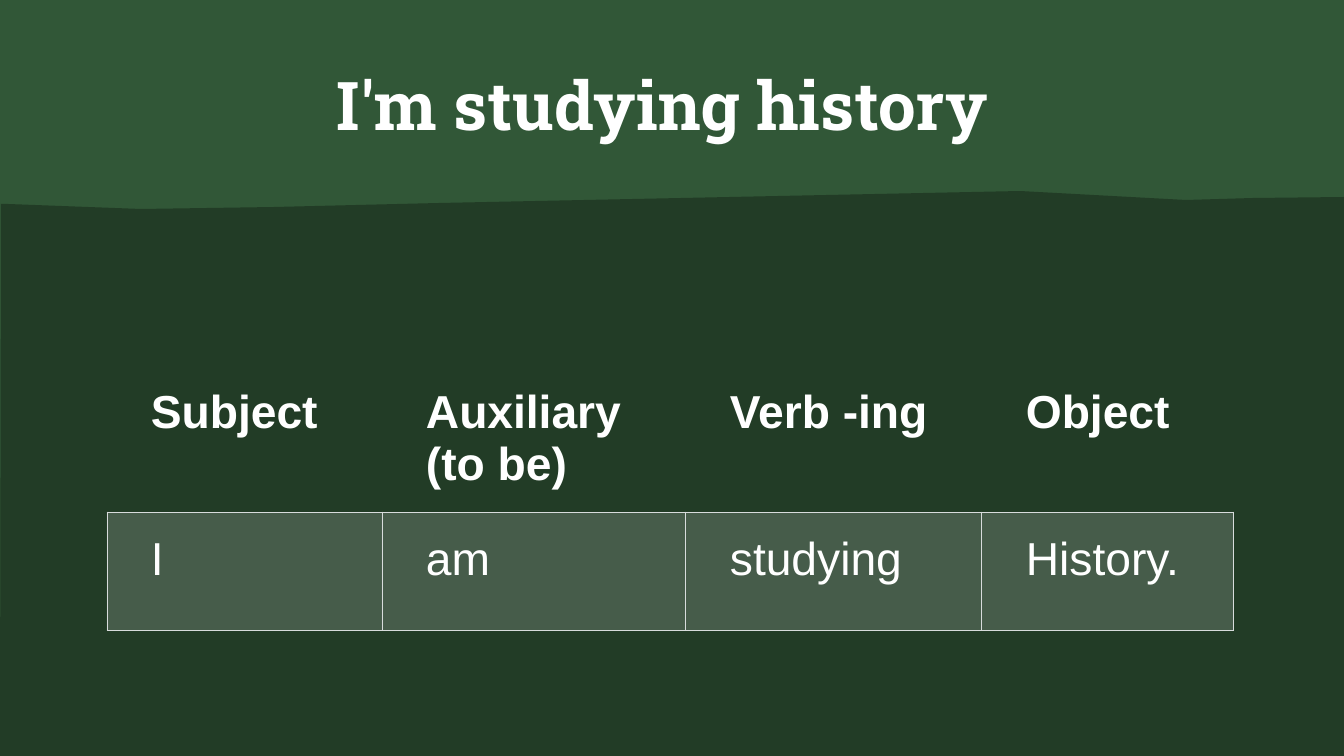
from lxml.etree import SubElement
from pptx import Presentation
from pptx.dml.color import RGBColor
from pptx.enum.shapes import MSO_SHAPE
from pptx.enum.text import MSO_ANCHOR, PP_ALIGN
from pptx.oxml.ns import qn
from pptx.util import Pt

PX = 12192000 / 1344
WIDTH, HEIGHT = 1344, 756
DARK, GREEN, WHITE = "223C26", "315737", "FFFFFF"
CELL, BORDER = "D8DEDC", "D8DCDC"

HILL = [(1020, 191), (1186, 200), (1253, 198), (1344, 197), (1344, 756),
        (0, 756), (1, 204), (8, 204), (141, 209), (274, 207), (357, 205),
        (439, 203)]
COLUMNS = [275, 304, 296, 252]
ROWS = [147, 118]
WORDS = [["Subject", "Auxiliary (to be)", "Verb -ing", "Object"],
         ["I", "am", "studying", "History."]]


def px(*values):
    return [round(v * PX) for v in values]


def color(value):
    return RGBColor.from_string(value)


def paint(sp, value):
    sp.shadow.inherit = False
    sp.fill.solid()
    sp.fill.fore_color.rgb = color(value)
    sp.line.fill.background()


def style(p, name, size, bold):
    p.font.name, p.font.size, p.font.bold = name, Pt(size), bold
    p.font.color.rgb = color(WHITE)


def add_backdrop(s):
    bg = s.background.fill
    bg.solid()
    bg.fore_color.rgb = color(DARK)
    band = s.shapes.add_shape(MSO_SHAPE.RECTANGLE, *px(0, 0, WIDTH, HEIGHT))
    paint(band, GREEN)
    builder = s.shapes.build_freeform(*HILL[0], scale=PX)
    builder.add_line_segments(HILL[1:], close=True)
    paint(builder.convert_to_shape(), DARK)


def add_title(s, text, x, y, w, h):
    sp = s.shapes.title
    # The placeholder comes first in the tree, so bring it above the backdrop.
    s.shapes._spTree.append(sp._element)
    sp.left, sp.top, sp.width, sp.height = px(x, y, w, h)
    tf = sp.text_frame
    tf.text = text
    tf.word_wrap = True
    tf.vertical_anchor = MSO_ANCHOR.TOP
    tf.margin_left = tf.margin_top = tf.margin_right = tf.margin_bottom = 0
    p = tf.paragraphs[0]
    p.alignment = PP_ALIGN.CENTER
    p.line_spacing = 0.95
    style(p, "Roboto Slab", 48, True)


def set_borders(cell, visible):
    """Draw the named sides (L, R, T, B) and clear the others."""
    tcPr = cell._tc.get_or_add_tcPr()
    for side in "LRTB":
        ln = SubElement(tcPr, qn(f"a:ln{side}"), w=str(Pt(0.75)))
        if side in visible:
            fill = SubElement(ln, qn("a:solidFill"))
            SubElement(fill, qn("a:srgbClr"), val=BORDER)
        else:
            SubElement(ln, qn("a:noFill"))


def fill_cell(cell, text, header):
    cell.text = text
    cell.margin_left, cell.margin_top = px(44, 22)
    cell.margin_right, cell.margin_bottom = px(22, 22)
    style(cell.text_frame.paragraphs[0], "Arial", 33, header)
    set_borders(cell, "B" if header else "LRTB")
    if header:
        cell.fill.background()
    else:
        cell.fill.solid()
        cell.fill.fore_color.rgb = color(CELL)
        clr = cell._tc.tcPr.find(qn("a:solidFill")).find(qn("a:srgbClr"))
        SubElement(clr, qn("a:alpha"), val="20000")


def add_grammar_table(s, x, y):
    frame = s.shapes.add_table(len(ROWS), len(COLUMNS),
                               *px(x, y, sum(COLUMNS), sum(ROWS)))
    table = frame.table
    table.first_row = table.horz_banding = False
    for column, width in zip(table.columns, px(*COLUMNS)):
        column.width = width
    for row, height, words, header in zip(table.rows, px(*ROWS), WORDS,
                                          (True, False)):
        row.height = height
        for cell, word in zip(row.cells, words):
            fill_cell(cell, word, header)


def main():
    prs = Presentation()
    prs.slide_width, prs.slide_height = px(WIDTH, HEIGHT)
    s = prs.slides.add_slide(prs.slide_layouts[5])
    add_backdrop(s)
    add_title(s, "I'm studying history ", 80, 69, 1182, 109)
    add_grammar_table(s, 107, 365)
    prs.save("out.pptx")


if __name__ == "__main__":
    main()
